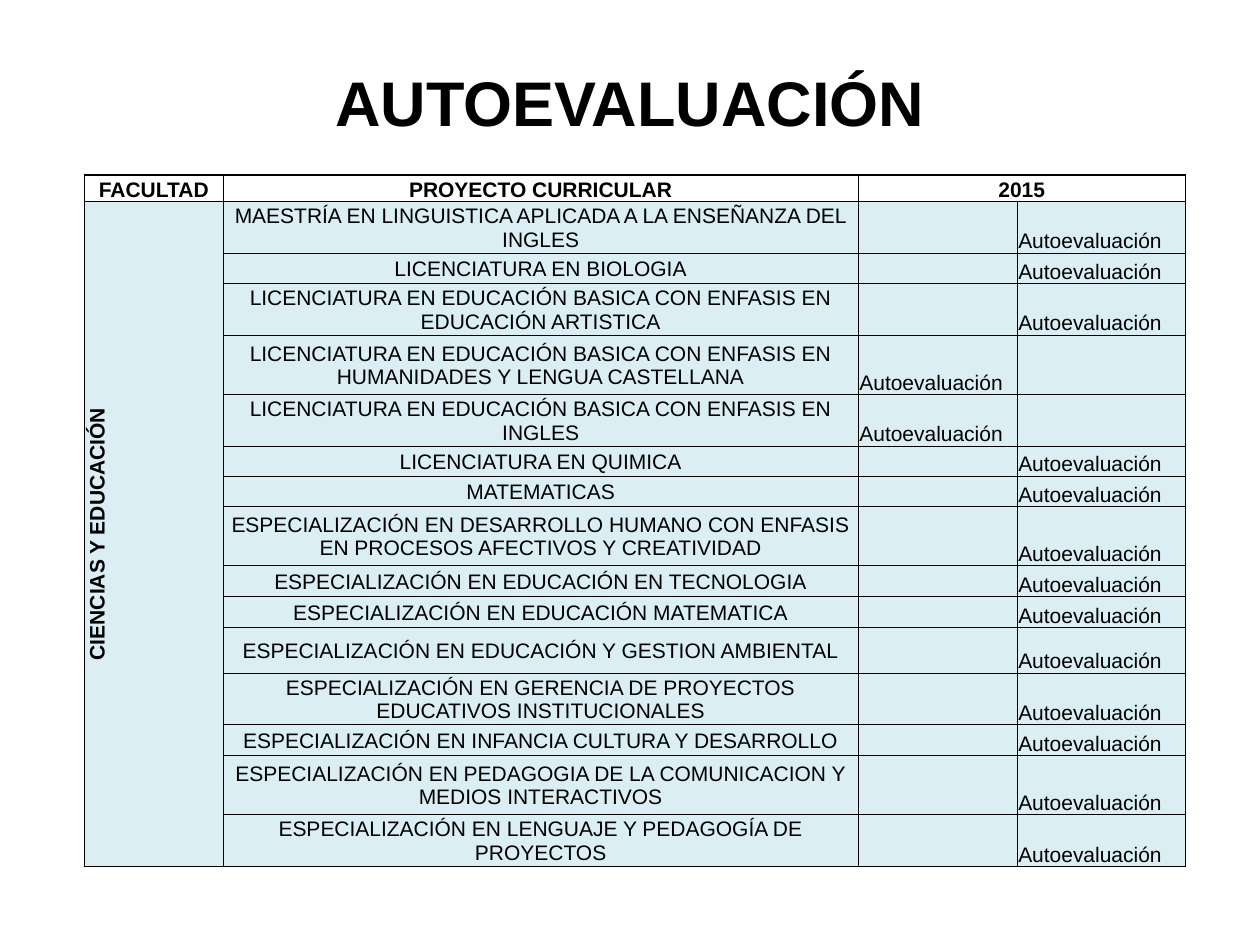
from dataclasses import dataclass

from lxml import etree
from pptx import Presentation
from pptx.dml.color import RGBColor
from pptx.enum.text import MSO_ANCHOR, PP_ALIGN
from pptx.oxml.ns import qn
from pptx.util import Pt

CENTER, LEFT = PP_ALIGN.CENTER, PP_ALIGN.LEFT
MIDDLE, BOTTOM = MSO_ANCHOR.MIDDLE, MSO_ANCHOR.BOTTOM


@dataclass(frozen=True)
class Theme:
    font: str = "Arial"
    ink: str = "000000"
    band: str = "DAEEF3"
    title_size: float = 36
    body_size: float = 12
    outer_line: float = 1
    inner_line: float = 0.5
    cell_inset: float = 0.72


def write(frame, text, *, theme, size, bold=False, align=CENTER):
    paragraph = frame.paragraphs[0]
    paragraph.alignment = align
    if not text:
        etree.SubElement(paragraph._p, qn("a:endParaRPr"), sz=str(size * 100))
        return
    run = paragraph.add_run()
    run.text = text
    run.font.name = theme.font
    run.font.size = Pt(size)
    run.font.bold = bold
    run.font.color.rgb = RGBColor.from_string(theme.ink)


class SlideBuilder:
    def __init__(self, slide, theme):
        self.slide = slide
        self.theme = theme

    def title(self, text, left, top, width, height):
        box = self.slide.shapes.add_textbox(Pt(left), Pt(top), Pt(width), Pt(height))
        frame = box.text_frame
        frame.word_wrap = True
        frame.vertical_anchor = MIDDLE
        frame.margin_left = frame.margin_right = 0
        frame.margin_top = frame.margin_bottom = 0
        write(frame, text, theme=self.theme, size=self.theme.title_size, bold=True)

    def table(self, left, top, widths, heights):
        table = self.slide.shapes.add_table(
            len(heights), len(widths), Pt(left), Pt(top),
            Pt(sum(widths)), Pt(sum(heights))).table
        table.first_row = table.horz_banding = False
        for column, width in zip(table.columns, widths):
            column.width = Pt(width)
        for row, height in zip(table.rows, heights):
            row.height = Pt(height)
        return table

    def borders(self, cell, **widths):
        properties = cell._tc.get_or_add_tcPr()
        for side in "LRTB":
            width = widths.get(side, self.theme.inner_line)
            line = etree.SubElement(properties, qn(f"a:ln{side}"), w=str(Pt(width)))
            fill = etree.SubElement(line, qn("a:solidFill"))
            etree.SubElement(fill, qn("a:srgbClr"), val=self.theme.ink)

    def cell(self, cell, text, *, fill=None, anchor=MIDDLE, edges=None, **text_format):
        self.borders(cell, **(edges or {}))
        if fill:
            cell.fill.solid()
            cell.fill.fore_color.rgb = RGBColor.from_string(fill)
        else:
            cell.fill.background()
        cell.vertical_anchor = anchor
        cell.margin_left = cell.margin_right = cell.margin_top = Pt(self.theme.cell_inset)
        cell.margin_bottom = 0
        write(cell.text_frame, text, theme=self.theme,
              size=self.theme.body_size, **text_format)


FACULTY = "CIENCIAS Y EDUCACIÓN"
MARK = "Autoevaluación"
HEADINGS = ["FACULTAD", "PROYECTO CURRICULAR", "2015", ""]
COLUMN_WIDTHS = [79.4, 362.8, 90.8, 96.2]
HEADER_HEIGHT = 10.8
FIRST_TERM, SECOND_TERM = 0, 1
PROGRAMS = [
    ("MAESTRÍA EN LINGUISTICA APLICADA A LA ENSEÑANZA DEL INGLES", 25.9, SECOND_TERM),
    ("LICENCIATURA EN BIOLOGIA", 17.3, SECOND_TERM),
    ("LICENCIATURA EN EDUCACIÓN BASICA CON ENFASIS EN EDUCACIÓN ARTISTICA", 25.9, SECOND_TERM),
    ("LICENCIATURA EN EDUCACIÓN BASICA CON ENFASIS EN HUMANIDADES Y LENGUA CASTELLANA",
     33.8, FIRST_TERM),
    ("LICENCIATURA EN EDUCACIÓN BASICA CON ENFASIS EN INGLES", 17.7, FIRST_TERM),
    ("LICENCIATURA EN QUIMICA", 17.3, SECOND_TERM),
    ("MATEMATICAS", 17.3, SECOND_TERM),
    ("ESPECIALIZACIÓN EN DESARROLLO HUMANO CON ENFASIS EN PROCESOS AFECTIVOS Y CREATIVIDAD",
     33.8, SECOND_TERM),
    ("ESPECIALIZACIÓN EN EDUCACIÓN EN TECNOLOGIA", 17.7, SECOND_TERM),
    ("ESPECIALIZACIÓN EN EDUCACIÓN MATEMATICA", 17.7, SECOND_TERM),
    ("ESPECIALIZACIÓN EN EDUCACIÓN Y GESTION AMBIENTAL", 25.9, SECOND_TERM),
    ("ESPECIALIZACIÓN EN GERENCIA DE PROYECTOS EDUCATIVOS INSTITUCIONALES", 26.6, SECOND_TERM),
    ("ESPECIALIZACIÓN EN INFANCIA CULTURA Y DESARROLLO", 17.7, SECOND_TERM),
    ("ESPECIALIZACIÓN EN PEDAGOGIA DE LA COMUNICACION Y MEDIOS INTERACTIVOS",
     33.8, SECOND_TERM),
    ("ESPECIALIZACIÓN EN LENGUAJE Y PEDAGOGÍA DE PROYECTOS", 17.7, SECOND_TERM),
]


def main():
    presentation = Presentation()
    presentation.slide_width, presentation.slide_height = Pt(720), Pt(540)
    theme = Theme()
    builder = SlideBuilder(
        presentation.slides.add_slide(presentation.slide_layouts[6]), theme)
    builder.title("AUTOEVALUACIÓN", 36, 21.6, 648, 72.7)

    heights = [HEADER_HEIGHT] + [height for _, height, _ in PROGRAMS]
    schedule = builder.table(48.2, 100.1, COLUMN_WIDTHS, heights)
    schedule.cell(0, 2).merge(schedule.cell(0, 3))
    schedule.cell(1, 0).merge(schedule.cell(len(PROGRAMS), 0))

    left_edge = {"L": theme.outer_line}
    for column, heading in enumerate(HEADINGS):
        edges = {"T": theme.outer_line, **(left_edge if column == 0 else {})}
        builder.cell(schedule.cell(0, column), heading,
                     anchor=BOTTOM, edges=edges, bold=True)

    for row, (program, _, term) in enumerate(PROGRAMS, start=1):
        builder.cell(schedule.cell(row, 0), FACULTY if row == 1 else "",
                     fill=theme.band, edges=left_edge, bold=True)
        builder.cell(schedule.cell(row, 1), program, fill=theme.band)
        for column in (FIRST_TERM, SECOND_TERM):
            builder.cell(schedule.cell(row, 2 + column), MARK if column == term else "",
                         fill=theme.band, anchor=BOTTOM, align=LEFT)
    schedule.cell(1, 0)._tc.get_or_add_tcPr().set("vert", "vert270")

    presentation.save("out.pptx")


if __name__ == "__main__":
    main()
